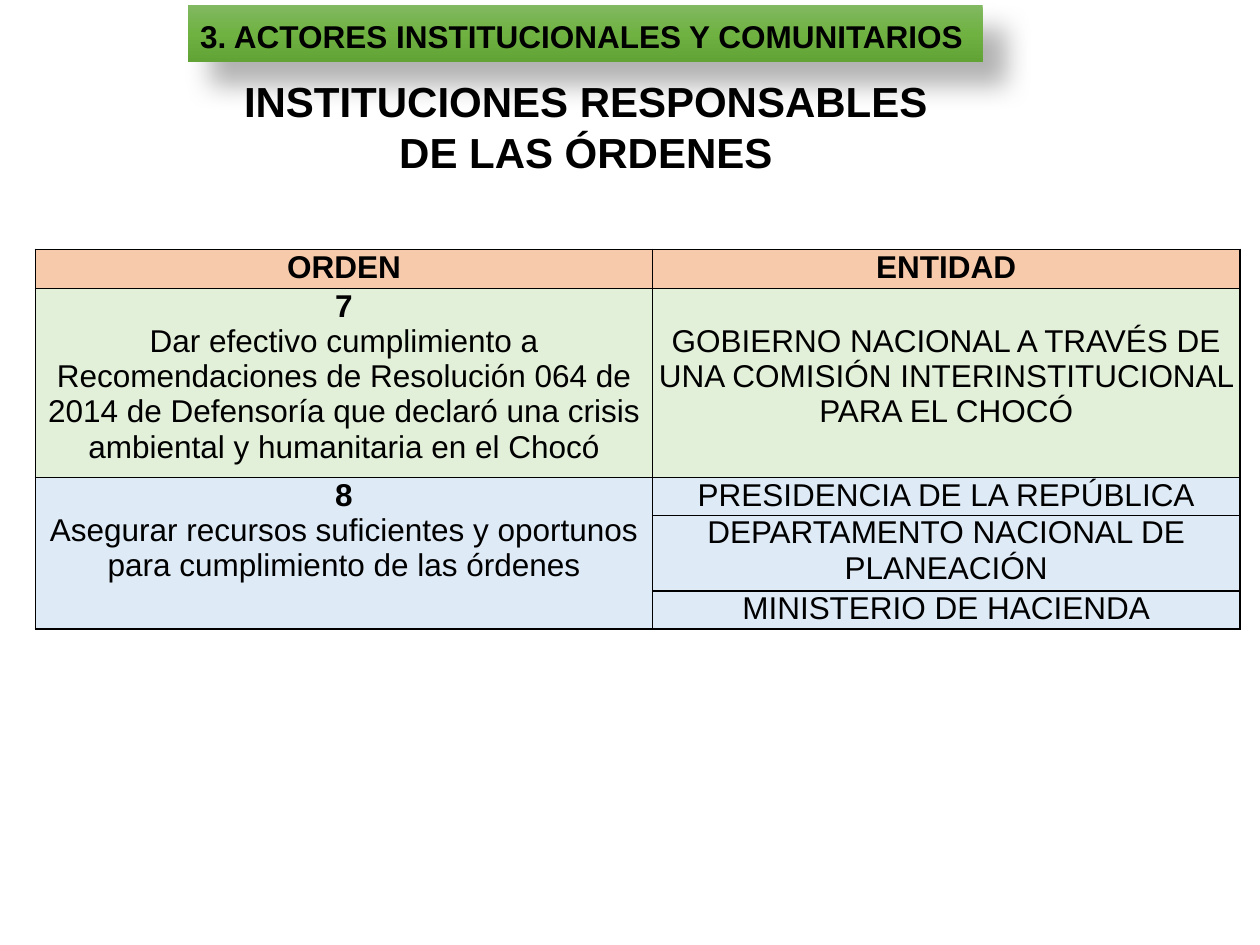
from pptx import Presentation, oxml
from pptx import util as u
from pptx.dml.color import RGBColor
from pptx.enum import shapes, text
from pptx.oxml import ns

BLACK = RGBColor(0x00, 0x00, 0x00)
PEACH = RGBColor(0xF7, 0xCA, 0xAC)
GREEN = RGBColor(0xE2, 0xEF, 0xD9)
BLUE = RGBColor(0xDE, 0xEA, 0xF6)
BANNER_STOPS = [
    (0, RGBColor(0x81, 0xB8, 0x61)),
    (50, RGBColor(0x6F, 0xB2, 0x42)),
    (100, RGBColor(0x62, 0xA3, 0x36)),
]

COLUMN_WIDTHS = [4.9, 4.66]
ROW_HEIGHTS = [0.31, 1.5, 0.3, 0.6, 0.3]
ROW_FILLS = [PEACH, GREEN, BLUE, BLUE, BLUE]
ORDERS = [
    (0, "ORDEN", None),
    (1, "7", "Dar efectivo cumplimiento a Recomendaciones de Resolución 064 de 2014 "
             "de Defensoría que declaró una crisis ambiental y humanitaria en el Chocó"),
    (2, "8", "Asegurar recursos suficientes y oportunos para cumplimiento de las órdenes"),
]
ENTITIES = [
    "ENTIDAD",
    "GOBIERNO NACIONAL A TRAVÉS DE UNA COMISIÓN INTERINSTITUCIONAL PARA EL CHOCÓ",
    "PRESIDENCIA DE LA REPÚBLICA",
    "DEPARTAMENTO NACIONAL DE PLANEACIÓN",
    "MINISTERIO DE HACIENDA",
]


def write(paragraph, content, size=18, bold=False, align=text.PP_ALIGN.CENTER, spacing=1.0):
    """Put formatted text in a paragraph."""
    paragraph.alignment = align
    paragraph.line_spacing = spacing
    run = paragraph.add_run()
    run.text = content
    run.font.name = "Arial"
    run.font.size = u.Pt(size)
    run.font.bold = bold
    run.font.color.rgb = BLACK


def drawing(xml):
    """Parse a DrawingML fragment whose root is left open for its namespace."""
    return oxml.parse_xml(xml.replace(">", f" {ns.nsdecls('a')}>", 1))


class SlideBuilder:
    """Draw the elements of one slide in a shared style."""

    def __init__(self, slide):
        self.slide = slide

    def title(self, content, left, top, width, height):
        """Place the title placeholder."""
        title = self.slide.shapes.title
        title.left, title.top = u.Inches(left), u.Inches(top)
        title.width, title.height = u.Inches(width), u.Inches(height)
        frame = title.text_frame
        frame.word_wrap = True
        frame.auto_size = text.MSO_AUTO_SIZE.SHAPE_TO_FIT_TEXT
        frame.vertical_anchor = text.MSO_ANCHOR.TOP
        write(frame.paragraphs[0], content, size=24, bold=True)

    def banner(self, content, left, top, width, height):
        """Draw the gradient banner with its shadow behind the title."""
        banner = self.slide.shapes.add_shape(
            shapes.MSO_SHAPE.RECTANGLE,
            u.Inches(left), u.Inches(top), u.Inches(width), u.Inches(height))
        banner.line.fill.background()
        stops = "".join(
            f'<a:gs pos="{position * 1000}"><a:srgbClr val="{color}"/></a:gs>'
            for position, color in BANNER_STOPS)
        properties = banner.element.spPr
        properties.insert(2, drawing(
            f'<a:gradFill><a:gsLst>{stops}</a:gsLst><a:lin ang="5400000" scaled="0"/></a:gradFill>'))
        properties.append(drawing(
            f'<a:effectLst><a:outerShdw blurRad="{u.Pt(15)}" dist="{u.Pt(18)}" dir="2700000" '
            'algn="tl" rotWithShape="0"><a:srgbClr val="000000"><a:alpha val="30000"/>'
            '</a:srgbClr></a:outerShdw></a:effectLst>'))
        frame = banner.text_frame
        frame.word_wrap = True
        frame.vertical_anchor = text.MSO_ANCHOR.MIDDLE
        write(frame.paragraphs[0], content, bold=True,
              align=text.PP_ALIGN.JUSTIFY, spacing=1.15)
        self.slide.shapes.title.element.addprevious(banner.element)

    def table(self, left, top, column_widths, row_heights, row_fills):
        """Add an empty bordered table."""
        frame = self.slide.shapes.add_table(
            len(row_heights), len(column_widths), u.Inches(left), u.Inches(top),
            u.Inches(sum(column_widths)), u.Inches(sum(row_heights)))
        table = frame.table
        table.first_row = table.horz_banding = False
        for column, width in zip(table.columns, column_widths):
            column.width = u.Inches(width)
        for row, height, color in zip(table.rows, row_heights, row_fills):
            row.height = u.Inches(height)
            for cell in row.cells:
                self.style_cell(cell, color)
        return table

    def style_cell(self, cell, color):
        """Set the fill, margins and borders of a cell."""
        cell.fill.solid()
        cell.fill.fore_color.rgb = color
        cell.margin_left = cell.margin_right = u.Inches(0.04)
        cell.margin_top = cell.margin_bottom = 0
        properties = cell._tc.get_or_add_tcPr()
        for index, side in enumerate("LRTB"):
            properties.insert(index, drawing(
                f'<a:ln{side} w="{u.Pt(1)}"><a:solidFill><a:srgbClr val="{BLACK}"/>'
                f'</a:solidFill></a:ln{side}>'))


def main():
    """Build and save the slide."""
    presentation = Presentation()
    presentation.slide_width, presentation.slide_height = u.Inches(10), u.Inches(7.5)
    builder = SlideBuilder(presentation.slides.add_slide(presentation.slide_layouts[5]))
    builder.banner("3. ACTORES INSTITUCIONALES Y COMUNITARIOS", 1.49, 0.04, 6.31, 0.45)
    builder.title("INSTITUCIONES RESPONSABLES DE LAS ÓRDENES", 1.56, 0.55, 6.18, 0.91)

    table = builder.table(0.28, 1.98, COLUMN_WIDTHS, ROW_HEIGHTS, ROW_FILLS)
    table.cell(2, 0).merge(table.cell(4, 0))
    for row, heading, description in ORDERS:
        frame = table.cell(row, 0).text_frame
        write(frame.paragraphs[0], heading, bold=True)
        if description:
            write(frame.add_paragraph(), description)
    for row, entity in enumerate(ENTITIES):
        write(table.cell(row, 1).text_frame.paragraphs[0], entity, bold=row == 0)
    table.cell(1, 1).margin_top = u.Inches(0.28)

    presentation.save("out.pptx")


if __name__ == "__main__":
    main()
